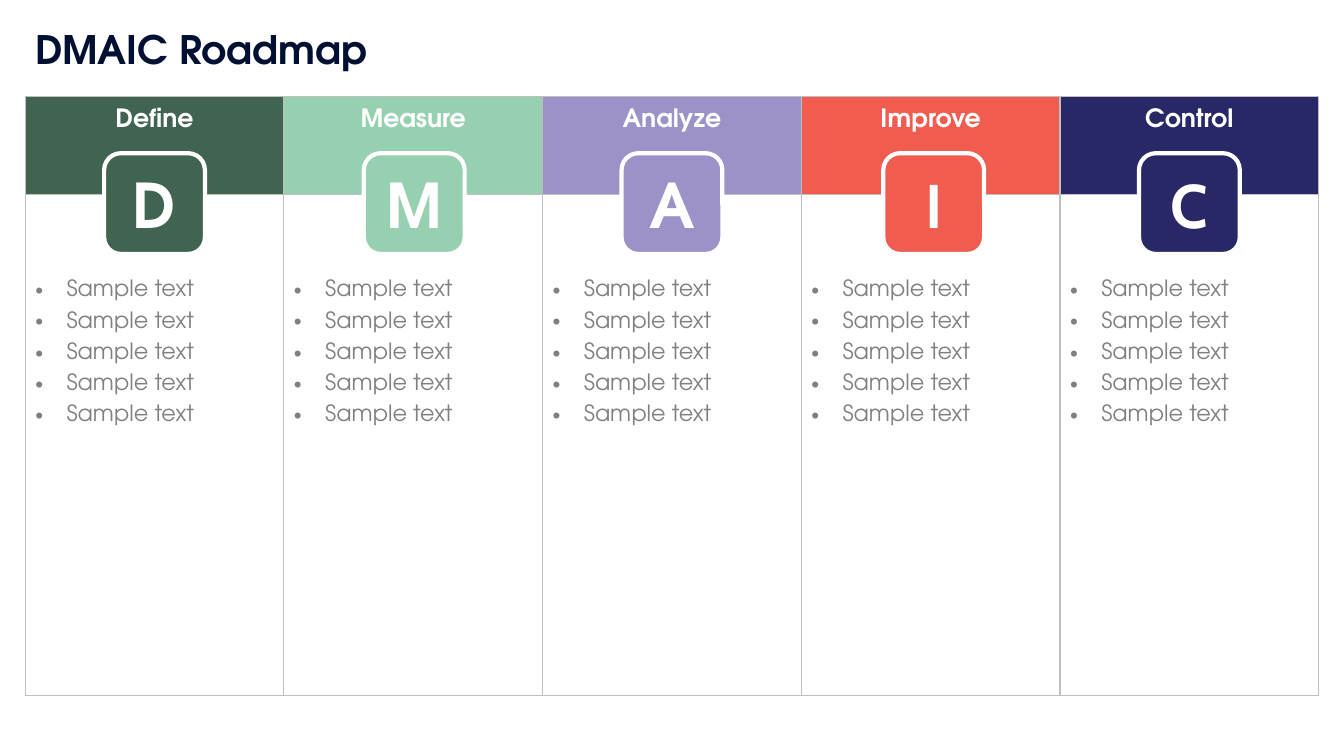
from dataclasses import dataclass

from lxml.etree import SubElement
from pptx import Presentation
from pptx.dml.color import RGBColor
from pptx.enum.shapes import MSO_SHAPE
from pptx.enum.text import MSO_ANCHOR, MSO_AUTO_SIZE, PP_ALIGN
from pptx.oxml.ns import qn
from pptx.util import Emu, Pt

# Content: phase, badge letter, colour, badge font, badge shift from column centre
TITLE = "DMAIC Roadmap"
PHASES = [
    ("Define", "D", "406352", "TeX Gyre Adventor", 0),
    ("Measure", "M", "97D0B1", "TeX Gyre Adventor", 1),
    ("Analyze", "A", "9C92C8", "TeX Gyre Adventor", 0),
    ("Improve", "I", "F05C4F", "Cabin", 3),
    ("Control", "C", "292866", "Cabin", 0),
]
STEPS = ["Sample text"] * 5


@dataclass(frozen=True)
class Theme:
    font: str = "TeX Gyre Adventor"
    title: str = "001033"
    light: str = "FFFFFF"
    body: str = "808080"
    border: str = "BFBFBF"
    title_size: int = 28
    phase_size: int = 18
    badge_size: int = 44
    body_size: int = 16


THEME = Theme()

# Layout in px, 100 to the inch
PAGE_WIDTH, PAGE_HEIGHT = 1333, 750
TABLE_LEFT, TABLE_TOP, TABLE_WIDTH = 25, 96, 1283
HEADER_HEIGHT, BODY_HEIGHT = 97, 497
BADGE_TOP, BADGE_SIZE = 152, 100
HEADER_INSET, BODY_INSET, BULLET_INDENT = 12, 75, 31
COLUMN_WIDTH = TABLE_WIDTH / len(PHASES)


def px(length):
    return Emu(round(length * 9144))


def set_font(para, size, colour, bold=False, name=THEME.font):
    para.font.name = name
    para.font.size = Pt(size)
    para.font.bold = bold
    para.font.color.rgb = RGBColor.from_string(colour)


def add_borders(cell):
    properties = cell._tc.get_or_add_tcPr()
    for side in ("a:lnL", "a:lnR", "a:lnT", "a:lnB"):
        line = SubElement(properties, qn(side), w=str(Pt(1)))
        fill = SubElement(line, qn("a:solidFill"))
        SubElement(fill, qn("a:srgbClr"), val=THEME.border)


def add_bullet(para):
    properties = para._p.get_or_add_pPr()
    properties.set("marL", str(px(BULLET_INDENT)))
    properties.set("indent", str(-px(BULLET_INDENT)))
    SubElement(properties, qn("a:buFont"), typeface="Arial")
    SubElement(properties, qn("a:buChar"), char="•")


def fill_header(cell, phase, colour):
    add_borders(cell)
    cell.fill.solid()
    cell.fill.fore_color.rgb = RGBColor.from_string(colour)
    cell.margin_top = px(HEADER_INSET)
    para = cell.text_frame.paragraphs[0]
    para.text = phase
    para.alignment = PP_ALIGN.CENTER
    set_font(para, THEME.phase_size, THEME.light, bold=True)


def fill_body(cell):
    add_borders(cell)
    cell.fill.background()
    cell.margin_top = px(BODY_INSET)
    cell.text_frame.text = "\n".join(STEPS)
    for para in cell.text_frame.paragraphs:
        add_bullet(para)
        para.line_spacing = 1.5
        set_font(para, THEME.body_size, THEME.body)


def add_badge(page, letter, colour, font, centre):
    badge = page.shapes.add_shape(
        MSO_SHAPE.ROUNDED_RECTANGLE, px(centre - BADGE_SIZE / 2), px(BADGE_TOP),
        px(BADGE_SIZE), px(BADGE_SIZE))
    badge.shadow.inherit = False
    badge.fill.solid()
    badge.fill.fore_color.rgb = RGBColor.from_string(colour)
    badge.line.color.rgb = RGBColor.from_string(THEME.light)
    badge.line.width = Pt(3)
    badge.text_frame.vertical_anchor = MSO_ANCHOR.MIDDLE
    para = badge.text_frame.paragraphs[0]
    para.text = letter
    para.alignment = PP_ALIGN.CENTER
    set_font(para, THEME.badge_size, THEME.light, bold=True, name=font)


def main():
    deck = Presentation()
    deck.slide_width, deck.slide_height = px(PAGE_WIDTH), px(PAGE_HEIGHT)
    page = deck.slides.add_slide(deck.slide_layouts[6])

    # Phase table
    table = page.shapes.add_table(
        2, len(PHASES), px(TABLE_LEFT), px(TABLE_TOP),
        px(TABLE_WIDTH), px(HEADER_HEIGHT + BODY_HEIGHT)).table
    table.first_row = table.horz_banding = False
    table.rows[0].height, table.rows[1].height = px(HEADER_HEIGHT), px(BODY_HEIGHT)

    # Columns with their badges
    for index, (phase, letter, colour, font, shift) in enumerate(PHASES):
        table.columns[index].width = px(COLUMN_WIDTH)
        fill_header(table.cell(0, index), phase, colour)
        fill_body(table.cell(1, index))
        centre = TABLE_LEFT + (index + 0.5) * COLUMN_WIDTH + shift
        add_badge(page, letter, colour, font, centre)

    # Title
    box = page.shapes.add_textbox(px(25), px(20), px(356), px(57))
    box.text_frame.word_wrap = True
    box.text_frame.auto_size = MSO_AUTO_SIZE.SHAPE_TO_FIT_TEXT
    para = box.text_frame.paragraphs[0]
    para.text = TITLE
    set_font(para, THEME.title_size, THEME.title, bold=True)

    deck.save("out.pptx")


if __name__ == "__main__":
    main()
